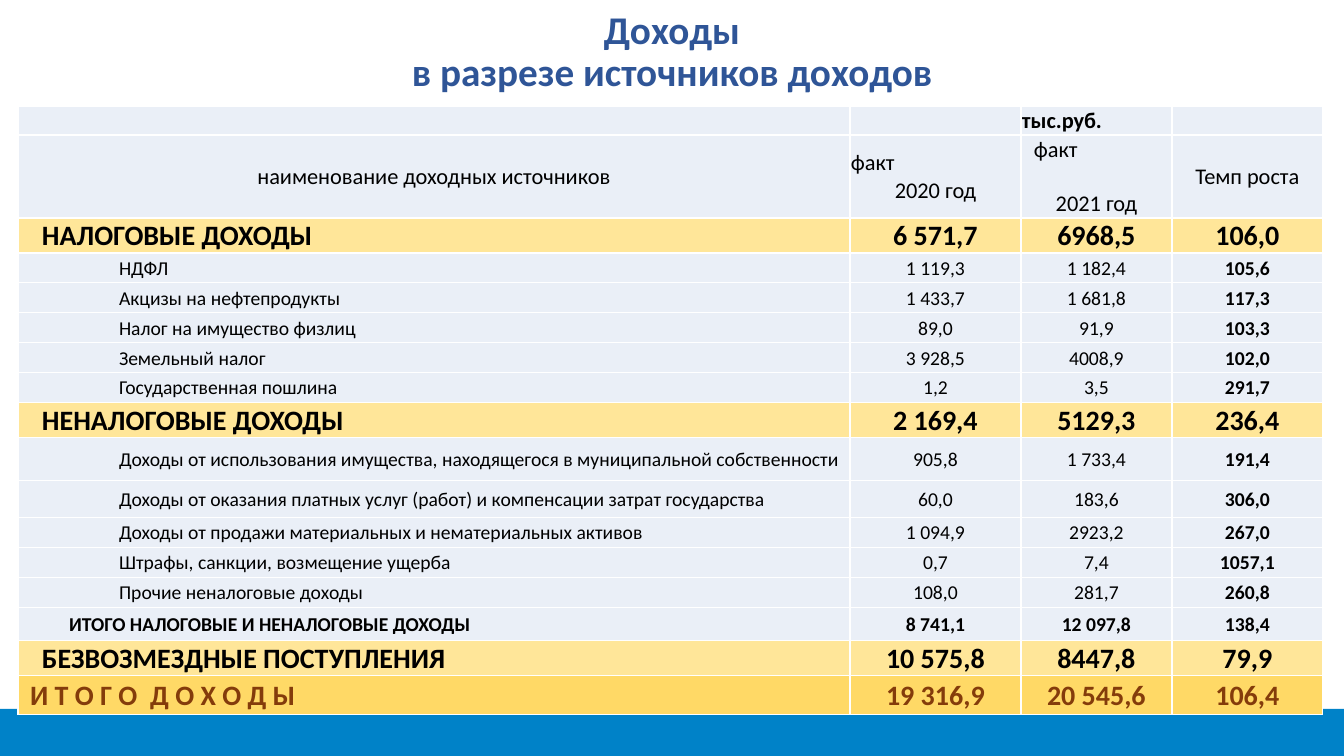
"""Build a slide with a table of budget revenue by source."""
from dataclasses import dataclass

from lxml.etree import SubElement
from pptx import Presentation
from pptx.dml.color import RGBColor
from pptx.enum.shapes import MSO_SHAPE
from pptx.enum.text import MSO_ANCHOR, PP_ALIGN
from pptx.oxml import parse_xml
from pptx.oxml.ns import nsdecls, qn
from pptx.slide import Slide
from pptx.table import _Cell
from pptx.text.text import _Paragraph
from pptx.util import Emu, Pt

EMU_PER_PX = 914400 / 100.8


@dataclass(frozen=True)
class Theme:
    font: str = "Calibri"
    title: str = "2F5597"
    text: str = "000000"
    total_text: str = "843C0B"
    band: str = "0082C8"
    plain: str = "EAEFF7"
    section: str = "FFE699"
    total: str = "FFD966"
    border: str = "FFFFFF"
    title_size: int = 28
    section_size: int = 20
    header_size: int = 16
    item_size: int = 14


THEME = Theme()


@dataclass(frozen=True)
class RowStyle:
    fill: str
    color: str
    size: int
    bold: tuple[bool, bool, bool, bool]
    margin: int = 1
    level: int = 0
    anchor: MSO_ANCHOR = MSO_ANCHOR.MIDDLE


@dataclass(frozen=True)
class RevenueRow:
    style: RowStyle
    height: int
    cells: tuple[str, str, str, str]


ALL_BOLD = (True,) * 4
UNIT = RowStyle(THEME.plain, THEME.text, THEME.header_size, ALL_BOLD, anchor=MSO_ANCHOR.BOTTOM)
HEADER = RowStyle(THEME.plain, THEME.text, THEME.header_size, (False,) * 4)
SECTION = RowStyle(THEME.section, THEME.text, THEME.section_size, ALL_BOLD, margin=24)
ITEM = RowStyle(THEME.plain, THEME.text, THEME.item_size, (False, False, False, True), level=2)
SUBTOTAL = RowStyle(THEME.plain, THEME.text, THEME.item_size, ALL_BOLD, level=1)
TOTAL = RowStyle(THEME.total, THEME.total_text, THEME.section_size, ALL_BOLD, margin=12)

LEVEL_INDENT = 50
COLUMN_WIDTHS = (832, 171, 151, 151)
ROWS = (
    RevenueRow(UNIT, 29, ("", "", "тыс.руб.", "")),
    RevenueRow(HEADER, 83, ("наименование доходных источников", "факт\n2020 год", "факт\n2021 год", "Темп роста")),
    RevenueRow(SECTION, 35, ("НАЛОГОВЫЕ ДОХОДЫ", "6 571,7", "6968,5", "106,0")),
    RevenueRow(ITEM, 30, ("НДФЛ", "1 119,3", "1 182,4", "105,6")),
    RevenueRow(ITEM, 30, ("Акцизы на нефтепродукты", "1 433,7", "1 681,8", "117,3")),
    RevenueRow(ITEM, 30, ("Налог на имущество физлиц", "89,0", "91,9", "103,3")),
    RevenueRow(ITEM, 30, ("Земельный налог", "3 928,5", "4008,9", "102,0")),
    RevenueRow(ITEM, 30, ("Государственная пошлина", "1,2", "3,5", "291,7")),
    RevenueRow(SECTION, 35, ("НЕНАЛОГОВЫЕ ДОХОДЫ", "2 169,4", "5129,3", "236,4")),
    RevenueRow(ITEM, 43, ("Доходы от использования имущества, находящегося в муниципальной собственности",
                          "905,8", "1 733,4", "191,4")),
    RevenueRow(ITEM, 37, ("Доходы от оказания платных услуг (работ) и компенсации затрат государства",
                          "60,0", "183,6", "306,0")),
    RevenueRow(ITEM, 30, ("Доходы от продажи материальных и нематериальных активов",
                          "1 094,9", "2923,2", "267,0")),
    RevenueRow(ITEM, 30, ("Штрафы, санкции, возмещение ущерба", "0,7", "7,4", "1057,1")),
    RevenueRow(ITEM, 30, ("Прочие неналоговые доходы", "108,0", "281,7", "260,8")),
    RevenueRow(SUBTOTAL, 33, ("ИТОГО НАЛОГОВЫЕ И НЕНАЛОГОВЫЕ ДОХОДЫ", "8 741,1", "12 097,8", "138,4")),
    RevenueRow(SECTION, 35, ("БЕЗВОЗМЕЗДНЫЕ ПОСТУПЛЕНИЯ", "10 575,8", "8447,8", "79,9")),
    RevenueRow(TOTAL, 39, ("И Т О Г О  Д О Х О Д Ы", "19 316,9", "20 545,6", "106,4")),
)


def px(length: int) -> Emu:
    """Turn pixels into EMU."""
    return Emu(round(length * EMU_PER_PX))


def format_runs(paragraph: _Paragraph, size: int, color: str, bold: bool) -> None:
    """Apply the theme font to every run of a paragraph."""
    for run in paragraph.runs:
        run.font.name = THEME.font
        run.font.size = Pt(size)
        run.font.bold = bold
        run.font.color.rgb = RGBColor.from_string(color)


def indent(paragraph: _Paragraph, left: int) -> None:
    """Set the left indent of a paragraph."""
    properties = paragraph._p.get_or_add_pPr()
    properties.set("marL", str(px(left)))
    properties.set("indent", "0")


def add_borders(cell: _Cell) -> None:
    """Draw a thin line on all four sides of a cell."""
    properties = cell._tc.get_or_add_tcPr()
    for position, side in enumerate(("lnL", "lnR", "lnT", "lnB")):
        line = parse_xml(
            f'<a:{side} {nsdecls("a")} w="12700"><a:solidFill>'
            f'<a:srgbClr val="{THEME.border}"/></a:solidFill></a:{side}>'
        )
        properties.insert(position, line)


def fill_cell(cell: _Cell, column: int, row: RevenueRow) -> None:
    """Write and style one table cell."""
    style = row.style
    cell.text_frame.text = row.cells[column]
    cell.fill.solid()
    cell.fill.fore_color.rgb = RGBColor.from_string(style.fill)
    add_borders(cell)
    cell.vertical_anchor = style.anchor
    cell.margin_left = px(1 if column else style.margin)
    cell.margin_right = cell.margin_top = px(1)
    cell.margin_bottom = 0
    centred = style is HEADER or (column > 0 and style is not UNIT)
    for paragraph in cell.text_frame.paragraphs:
        paragraph.alignment = PP_ALIGN.CENTER if centred else PP_ALIGN.LEFT
        format_runs(paragraph, style.size, style.color, style.bold[column])
        if not paragraph.runs:
            SubElement(paragraph._p, qn("a:endParaRPr"), sz=str(style.size * 100))
        if column == 0 and style.level:
            paragraph.level = style.level
            indent(paragraph, style.level * LEVEL_INDENT)


def add_revenue_table(slide: Slide) -> None:
    """Add the revenue table."""
    height = sum(row.height for row in ROWS)
    table = slide.shapes.add_table(
        len(ROWS), len(COLUMN_WIDTHS), px(18), px(106), px(sum(COLUMN_WIDTHS)), px(height)
    ).table
    table.first_row = table.horz_banding = False
    for column, width in zip(table.columns, COLUMN_WIDTHS):
        column.width = px(width)
    for index, row in enumerate(ROWS):
        table.rows[index].height = px(row.height)
        for column in range(len(COLUMN_WIDTHS)):
            fill_cell(table.cell(index, column), column, row)
    for column in (1, 2):
        table.cell(1, column).text_frame.paragraphs[0].alignment = PP_ALIGN.LEFT
    fact_2021, year_2021 = table.cell(1, 2).text_frame.paragraphs
    indent(fact_2021, 12)
    year_2021.space_before = Pt(19)


def add_bottom_band(slide: Slide) -> None:
    """Add the coloured band along the bottom edge."""
    band = slide.shapes.add_shape(MSO_SHAPE.RECTANGLE, 0, px(709), px(1344), px(47))
    band.shadow.inherit = False
    band.fill.solid()
    band.fill.fore_color.rgb = RGBColor.from_string(THEME.band)
    band.line.fill.background()


def add_heading(slide: Slide) -> None:
    """Add the two-line heading."""
    frame = slide.shapes.add_textbox(px(92), 0, px(1160), px(106)).text_frame
    frame.word_wrap = True
    frame.vertical_anchor = MSO_ANCHOR.MIDDLE
    frame.text = "Доходы\nв разрезе источников доходов"
    for paragraph in frame.paragraphs:
        paragraph.alignment = PP_ALIGN.CENTER
        paragraph.line_spacing = 0.9
        format_runs(paragraph, THEME.title_size, THEME.title, True)


def main() -> None:
    """Build and save the presentation."""
    presentation = Presentation()
    presentation.slide_width = px(1344)
    presentation.slide_height = px(756)
    slide = presentation.slides.add_slide(presentation.slide_layouts[6])
    add_bottom_band(slide)
    add_heading(slide)
    add_revenue_table(slide)
    presentation.save("out.pptx")


if __name__ == "__main__":
    main()
